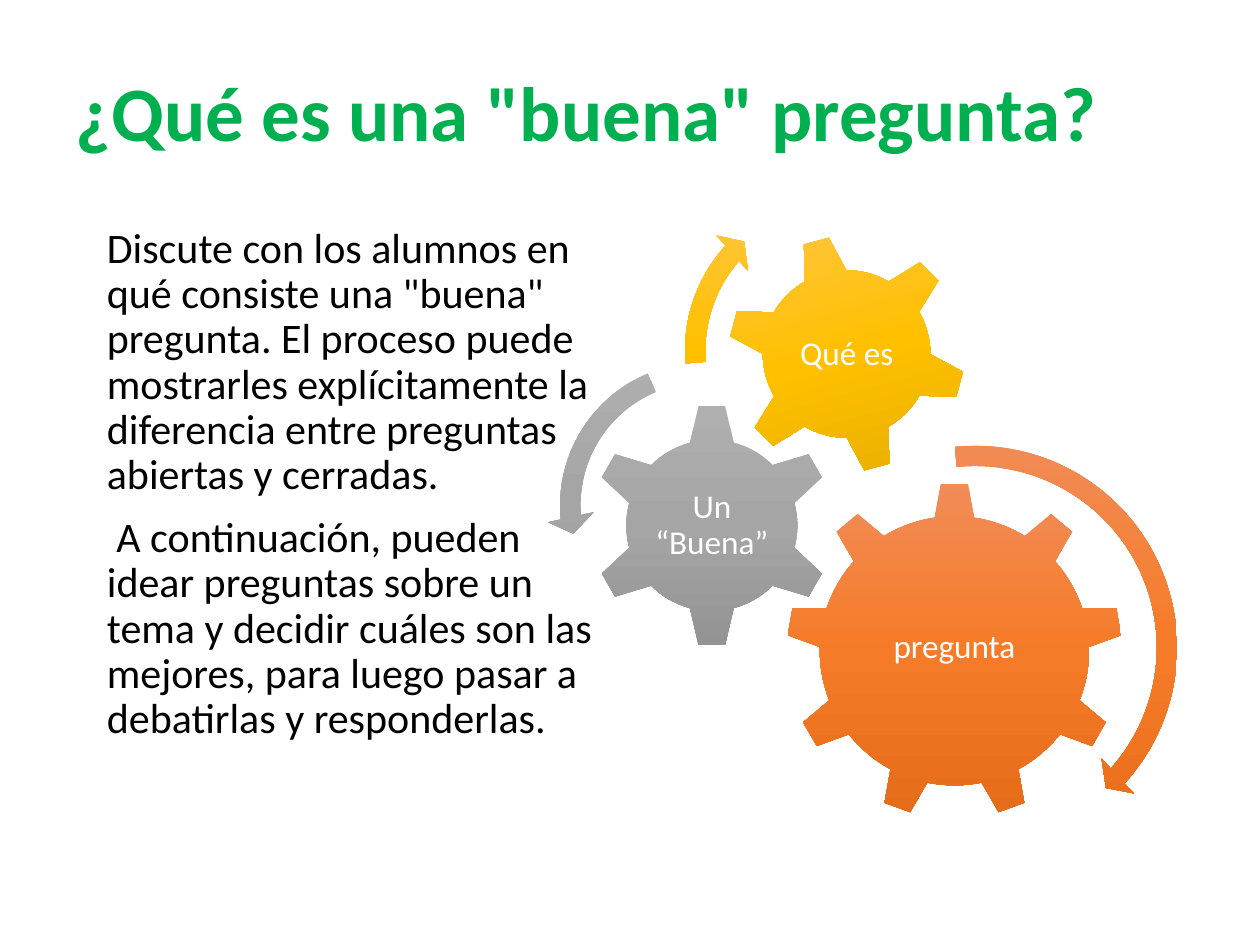
from collections import namedtuple
from copy import deepcopy
from dataclasses import dataclass

from pptx import Presentation
from pptx import util as u
from pptx.dml.color import RGBColor
from pptx.enum import shapes, text

CELL = 0.25  # inches; the slide is a grid of 40 columns by 30 rows
Box = namedtuple("Box", "left top width height")
Wheel = namedtuple("Wheel", "preset x y size rotation label label_y label_size ramp")
Arrow = namedtuple("Arrow", "preset x y size adjustments ramp")


@dataclass(frozen=True)
class Theme:
    font: str = "Calibri"
    title: str = "00B050"
    body: str = "000000"
    label: str = "FFFFFF"
    title_size: int = 44
    body_size: int = 24
    label_size: int = 19
    orange: tuple = ("F18C57", "F67B28", "E56C19")
    grey: tuple = ("AFAFAF", "A5A5A5", "939393")
    yellow: tuple = ("FFC64B", "FFC000", "E3AB00")


THEME = Theme()
TITLE_BOX = Box(2, 1.2, 36, 5)
BODY_BOX = Box(2, 7, 17.68, 19.8)
DIAGRAM_BOX = Box(17, 6, 21, 21)

BODY = [
    'Discute con los alumnos en qué consiste una "buena" pregunta. El proceso puede '
    "mostrarles explícitamente la diferencia entre preguntas abiertas y cerradas.",
    " A continuación, pueden idear preguntas sobre un tema y decidir cuáles son las "
    "mejores, para luego pasar a debatirlas y responderlas.",
]

# Centres and sizes in cells, from the corner of the diagram box
SHAPE = shapes.MSO_SHAPE
WHEELS = [
    Wheel(SHAPE.GEAR_9_TEETH if hasattr(SHAPE, "GEAR_9_TEETH") else SHAPE.GEAR_9,
          13.3, 14.66, 10.68, 0, "pregunta", 14.58, 6.4, THEME.orange),
    Wheel(SHAPE.GEAR_6, 5.6, 10.68, 7.76, 0, "Un “Buena”", 10.68, 3.84, THEME.grey),
    Wheel(SHAPE.GEAR_6, 9.88, 5.24, 7.6, 345, "Qué es", 5.26, 4.28, THEME.yellow),
]
# Adjustments: thickness, head angle, end angle, start angle, head width
ARROWS = [
    Arrow(SHAPE.CIRCULAR_ARROW, 13.96, 14.56, 13.68,
          (0.047, 2.99, 25.218, 158.492, 0.055), THEME.orange),
    Arrow(SHAPE.LEFT_CIRCULAR_ARROW, 5.32, 10.04, 9.92,
          (0.065, 4.3, 104.891, 148.378, 0.075), THEME.grey),
    Arrow(SHAPE.CIRCULAR_ARROW, 9.68, 5.12, 10.72,
          (0.06, 3.941, 133.138, 105.082, 0.07), THEME.yellow),
]


def lengths(box):
    """Turn grid cells into slide lengths."""
    return [u.Inches(value * CELL) for value in box]


def square(box, x, y, size):
    """Square of the given size, centred on a point inside the box."""
    return Box(box.left + x - size / 2, box.top + y - size / 2, size, size)


def write(shape, paragraphs, *, size, color, bold=False, align=text.PP_ALIGN.LEFT,
          anchor=text.MSO_ANCHOR.TOP, before=0, indent=0, inset=None):
    frame = shape.text_frame
    frame.word_wrap = True
    frame.auto_size = text.MSO_AUTO_SIZE.NONE
    frame.vertical_anchor = anchor
    if inset is not None:
        frame.margin_left = frame.margin_right = u.Inches(inset)
        frame.margin_top = frame.margin_bottom = u.Inches(inset)
    for index, words in enumerate(paragraphs):
        paragraph = frame.add_paragraph() if index else frame.paragraphs[0]
        paragraph.alignment = align
        paragraph.line_spacing = 0.9
        paragraph.space_before = u.Pt(before)
        if indent:
            paragraph._p.get_or_add_pPr().set("marL", str(u.Inches(indent)))
        run = paragraph.add_run()
        run.text = words
        run.font.name = THEME.font
        run.font.size = u.Pt(size)
        run.font.bold = bold
        run.font.color.rgb = RGBColor.from_string(color)


def paint(shape, ramp):
    """Fill with three colours from top to bottom, without line or shadow."""
    shape.shadow.inherit = False
    shape.line.fill.background()
    shape.fill.gradient()
    shape.fill.gradient_angle = 270
    stop_list = shape.fill._xPr.gradFill.gsLst
    stop_list.append(deepcopy(stop_list[-1]))
    for index, (stop, color) in enumerate(zip(shape.fill.gradient_stops, ramp)):
        stop.position = index / 2
        stop.color.rgb = RGBColor.from_string(color)


def add_title(slide, box):
    title = slide.shapes.title
    title.left, title.top, title.width, title.height = lengths(box)
    write(title, ['¿Qué es una "buena" pregunta?'], size=THEME.title_size,
          color=THEME.title, bold=True, anchor=text.MSO_ANCHOR.MIDDLE)


def add_body(slide, box):
    body = slide.shapes.add_textbox(*lengths(box))
    write(body, BODY, size=THEME.body_size, color=THEME.body, before=10, indent=0.25)


def add_wheel(group, box, wheel):
    gear = group.shapes.add_shape(
        wheel.preset, *lengths(square(box, wheel.x, wheel.y, wheel.size)))
    gear.rotation = wheel.rotation
    paint(gear, wheel.ramp)
    label = group.shapes.add_textbox(
        *lengths(square(box, wheel.x, wheel.label_y, wheel.label_size)))
    write(label, [wheel.label], size=THEME.label_size, color=THEME.label, inset=0.03,
          align=text.PP_ALIGN.CENTER, anchor=text.MSO_ANCHOR.MIDDLE)


def add_arrow(group, box, arrow):
    shape = group.shapes.add_shape(
        arrow.preset, *lengths(square(box, arrow.x, arrow.y, arrow.size)))
    for index, value in enumerate(arrow.adjustments):
        shape.adjustments[index] = value
    paint(shape, arrow.ramp)


def add_gear_diagram(slide, box):
    group = slide.shapes.add_group_shape()
    for wheel in WHEELS:
        add_wheel(group, box, wheel)
    for arrow in ARROWS:
        add_arrow(group, box, arrow)


def main():
    presentation = Presentation()
    presentation.slide_width = u.Inches(10)
    presentation.slide_height = u.Inches(7.5)
    slide = presentation.slides.add_slide(presentation.slide_layouts.get_by_name("Title Only"))
    add_title(slide, TITLE_BOX)
    add_body(slide, BODY_BOX)
    add_gear_diagram(slide, DIAGRAM_BOX)
    presentation.save("out.pptx")


if __name__ == "__main__":
    main()
